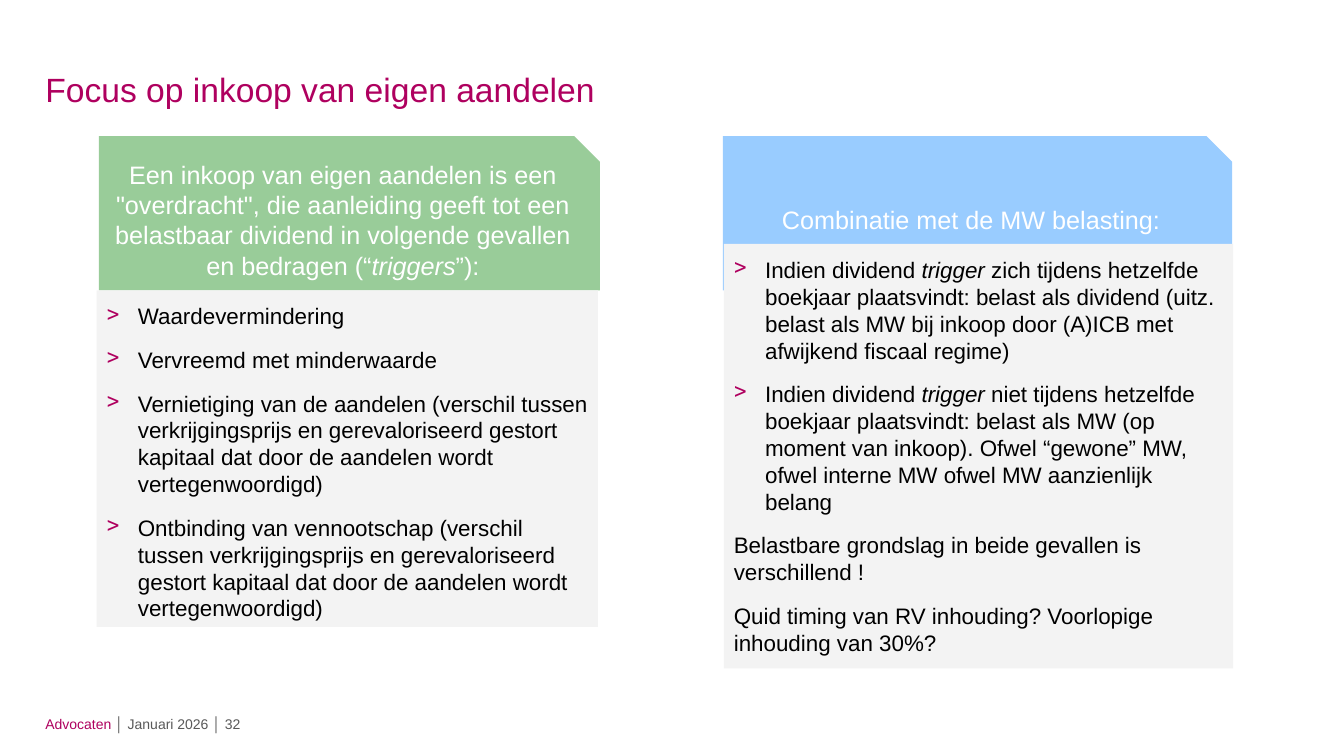
from lxml.etree import SubElement
from pptx import Presentation
from pptx.dml.color import RGBColor
from pptx.enum.shapes import MSO_SHAPE
from pptx.enum.text import MSO_ANCHOR, PP_ALIGN
from pptx.oxml.ns import qn
from pptx.util import Inches, Pt

MAGENTA = "AF005F"
WHITE = "FFFFFF"
BLACK = "000000"
GREY = "595959"
PANEL = "F3F3F3"

TRIGGER_HEADING = [
    "Een inkoop van eigen aandelen is een \"overdracht\", die aanleiding geeft tot een "
    "belastbaar dividend in volgende gevallen en bedragen (“", "triggers", "”):"]
TRIGGER_POINTS = [
    ["Waardevermindering"],
    ["Vervreemd met minderwaarde"],
    ["Vernietiging van de aandelen (verschil tussen verkrijgingsprijs en gerevaloriseerd "
     "gestort kapitaal dat door de aandelen wordt vertegenwoordigd)"],
    ["Ontbinding van vennootschap (verschil tussen verkrijgingsprijs en gerevaloriseerd "
     "gestort kapitaal dat door de aandelen wordt vertegenwoordigd)"],
]
TAX_HEADING = ["Combinatie met de MW belasting:"]
TAX_POINTS = [
    ["Indien dividend ", "trigger",
     " zich tijdens hetzelfde boekjaar plaatsvindt: belast als dividend (uitz. belast als MW "
     "bij inkoop door (A)ICB met afwijkend fiscaal regime)"],
    ["Indien dividend ", "trigger",
     " niet tijdens hetzelfde boekjaar plaatsvindt: belast als MW (op moment van inkoop). "
     "Ofwel “gewone” MW, ofwel interne MW ofwel MW aanzienlijk belang"],
]
TAX_REMARKS = [
    ["Belastbare grondslag in beide gevallen is verschillend !"],
    ["Quid timing van RV inhouding? Voorlopige inhouding van 30%?"],
]


def color(value):
    return RGBColor.from_string(value)


def add_run(paragraph, text, size, text_color, italic=False):
    run = paragraph.add_run()
    run.text = text
    run.font.name = "Arial"
    run.font.size = Pt(size)
    run.font.italic = italic
    run.font.color.rgb = color(text_color)


def add_alternating_runs(paragraph, parts, size, text_color):
    for index, part in enumerate(parts):
        add_run(paragraph, part, size, text_color, italic=index % 2 == 1)


def add_bullet(paragraph):
    properties = paragraph._p.get_or_add_pPr()
    properties.set("marL", str(Inches(0.31)))
    properties.set("indent", str(Inches(-0.31)))
    bullet_color = SubElement(properties, qn("a:buClr"))
    SubElement(bullet_color, qn("a:srgbClr"), val=MAGENTA)
    SubElement(properties, qn("a:buChar"), char=">")


def set_frame(frame, anchor, left, top, right, bottom):
    frame.word_wrap = True
    frame.vertical_anchor = anchor
    frame.margin_left, frame.margin_top = Inches(left), Inches(top)
    frame.margin_right, frame.margin_bottom = Inches(right), Inches(bottom)


def add_panel(slide, kind, box, fill):
    shape = slide.shapes.add_shape(kind, *map(Inches, box))
    shape.shadow.inherit = False
    shape.fill.solid()
    shape.fill.fore_color.rgb = color(fill)
    shape.line.fill.background()
    return shape


def add_heading(slide, box, fill, parts):
    shape = add_panel(slide, MSO_SHAPE.SNIP_1_RECTANGLE, box, fill)
    set_frame(shape.text_frame, MSO_ANCHOR.MIDDLE, 0.1, 0.05, 0.1, 0.05)
    paragraph = shape.text_frame.paragraphs[0]
    paragraph.alignment = PP_ALIGN.CENTER
    add_alternating_runs(paragraph, parts, 18, WHITE)


def add_body(slide, box, points, remarks=()):
    shape = add_panel(slide, MSO_SHAPE.RECTANGLE, box, PANEL)
    frame = shape.text_frame
    set_frame(frame, MSO_ANCHOR.TOP, 0.1, 0.12, 0.1, 0.05)
    for index, parts in enumerate([*points, *remarks]):
        paragraph = frame.add_paragraph() if index else frame.paragraphs[0]
        if index < len(points):
            add_bullet(paragraph)
        paragraph.alignment = PP_ALIGN.LEFT
        paragraph.space_after = Pt(12)
        add_alternating_runs(paragraph, parts, 16, BLACK)


def add_text_line(slide, box, size, bottom, parts):
    text_box = slide.shapes.add_textbox(*map(Inches, box))
    set_frame(text_box.text_frame, MSO_ANCHOR.MIDDLE, 0, 0.05, 0.1, bottom)
    for text, text_color in parts:
        add_run(text_box.text_frame.paragraphs[0], text, size, text_color)


def main():
    presentation = Presentation()
    presentation.slide_width, presentation.slide_height = Inches(13.33), Inches(7.5)
    slide = presentation.slides.add_slide(presentation.slide_layouts[6])
    add_text_line(slide, (0.45, 7.05, 3.39, 0.22), 10, 0,
                  [("Advocaten ", MAGENTA), ("│ Januari 2026 │ 32", GREY)])
    add_text_line(slide, (0.45, 0.41, 12.41, 0.94), 24, 0.05,
                  [("Focus op inkoop van eigen aandelen", MAGENTA)])
    add_heading(slide, (0.98, 1.35, 4.97, 1.53), "99CC99", TRIGGER_HEADING)
    add_heading(slide, (7.17, 1.35, 5.05, 1.53), "99CCFF", TAX_HEADING)
    add_body(slide, (0.96, 2.88, 4.97, 3.34), TRIGGER_POINTS)
    add_body(slide, (7.18, 2.42, 5.05, 4.21), TAX_POINTS, TAX_REMARKS)
    presentation.save("out.pptx")


if __name__ == "__main__":
    main()
